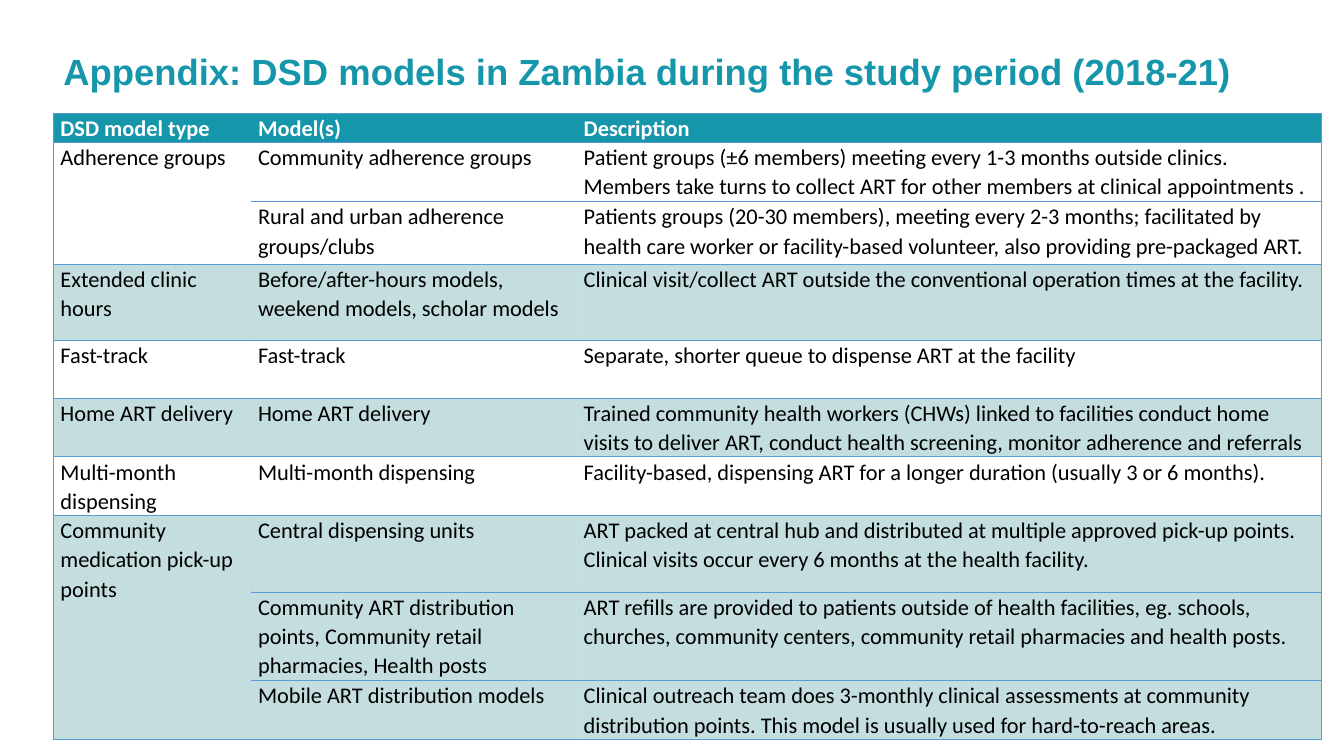
from lxml.etree import SubElement
from pptx import Presentation
from pptx.dml.color import RGBColor
from pptx.enum.text import MSO_ANCHOR
from pptx.oxml import parse_xml
from pptx.oxml.ns import nsdecls, qn
from pptx.util import Inches, Pt

TEAL = RGBColor(0x16, 0x96, 0xAB)
PALE_TEAL = RGBColor(0x8A, 0xBC, 0xBF)
RULE_BLUE = RGBColor(0x5B, 0x9B, 0xD5)
WHITE = RGBColor(0xFF, 0xFF, 0xFF)
BLACK = RGBColor(0, 0, 0)

TITLE = "Appendix: DSD models in Zambia during the study period (2018-21)"
HEADER = ("DSD model type", "Model(s)", "Description")
# Each model type with its (row height, models, description) entries
MODEL_TYPES = [
    ("Adherence groups", [
        (0.59, "Community adherence groups",
         "Patient groups (±6 members) meeting every 1-3 months outside clinics. "
         "Members take turns to collect ART for other members at clinical appointments ."),
        (0.62, "Rural and urban adherence groups/clubs",
         "Patients groups (20-30 members), meeting every 2-3 months; facilitated by "
         "health care worker or facility-based volunteer, also providing pre-packaged ART."),
    ]),
    ("Extended clinic hours", [
        (0.76, "Before/after-hours models,\nweekend models, scholar models",
         "Clinical visit/collect ART outside the conventional operation times at the facility."),
    ]),
    ("Fast-track", [
        (0.57, "Fast-track", "Separate, shorter queue to dispense ART at the facility"),
    ]),
    ("Home ART delivery", [
        (0.57, "Home ART delivery",
         "Trained community health workers (CHWs) linked to facilities conduct home "
         "visits to deliver ART, conduct health screening, monitor adherence and referrals"),
    ]),
    ("Multi-month dispensing", [
        (0.43, "Multi-month dispensing",
         "Facility-based, dispensing ART for a longer duration (usually 3 or 6 months)."),
    ]),
    ("Community medication pick-up points", [
        (0.76, "Central dispensing units",
         "ART packed at central hub and distributed at multiple approved pick-up points. "
         "Clinical visits occur every 6 months at the health facility."),
        (0.88, "Community ART distribution points, Community retail pharmacies, Health posts",
         "ART refills are provided to patients outside of health facilities, eg. schools, "
         "churches, community centers, community retail pharmacies and health posts."),
        (0.57, "Mobile ART distribution models",
         "Clinical outreach team does 3-monthly clinical assessments at community "
         "distribution points. This model is usually used for hard-to-reach areas."),
    ]),
]
HEADER_HEIGHT = 0.29
COLUMN_WIDTHS = (1.96, 3.23, 7.39)
CELL_FORMAT = {
    "margin_left": Inches(0.07), "margin_right": Inches(0.07),
    "margin_top": 0, "margin_bottom": 0, "vertical_anchor": MSO_ANCHOR.TOP,
}


def format_text(frame, text, line_spacing, color, **font_format):
    frame.text = text
    for paragraph in frame.paragraphs:
        paragraph.line_spacing = line_spacing
        paragraph.font.color.rgb = color
        for run in paragraph.runs:
            run.font.color.rgb = color
            for name, value in font_format.items():
                setattr(run.font, name, value)


def add_title(slide):
    title = slide.shapes.add_textbox(Inches(0.53), Inches(0.21), Inches(12.49), Inches(1.05))
    frame = title.text_frame
    frame.word_wrap = True
    frame.vertical_anchor = MSO_ANCHOR.MIDDLE
    format_text(frame, TITLE, 0.9, TEAL, name="Arial", size=Pt(26), bold=True)


def fill_cell(cell, color, opacity=100):
    cell.fill.solid()
    cell.fill.fore_color.rgb = color
    if opacity < 100:
        swatch = cell.fill._xPr.find(".//" + qn("a:srgbClr"))
        SubElement(swatch, qn("a:alpha"), val=str(opacity * 1000))


def set_borders(cell, ruled_sides):
    """Rule the given sides (letters of LRTB) and clear the others."""
    properties = cell._tc.get_or_add_tcPr()
    for position, side in enumerate("LRTB"):
        paint = (f'<a:solidFill><a:srgbClr val="{RULE_BLUE}"/></a:solidFill>'
                 if side in ruled_sides else "<a:noFill/>")
        border = parse_xml(f'<a:ln{side} {nsdecls("a")} w="{Pt(0.5)}">{paint}</a:ln{side}>')
        properties.insert(position, border)


def write_cell(cell, text, color=BLACK, bold=False):
    for name, value in CELL_FORMAT.items():
        setattr(cell, name, value)
    format_text(cell.text_frame, text, 1.07, color, name="Calibri", size=Pt(16), bold=bold)


def add_models_table(slide):
    heights = [HEADER_HEIGHT] + [entry[0] for _, entries in MODEL_TYPES for entry in entries]
    table = slide.shapes.add_table(
        len(heights), len(HEADER), Inches(0.53), Inches(1.12),
        Inches(sum(COLUMN_WIDTHS)), Inches(sum(heights))).table
    table.horz_banding = False
    for column, width in zip(table.columns, COLUMN_WIDTHS):
        column.width = Inches(width)
    for row, height in zip(table.rows, heights):
        row.height = Inches(height)

    outer_sides = ("LTB", "TB", "TBR")
    for column, heading in enumerate(HEADER):
        cell = table.cell(0, column)
        write_cell(cell, heading, WHITE, True)
        fill_cell(cell, TEAL)
        set_borders(cell, outer_sides[column])

    row = 1
    for group, (model_type, entries) in enumerate(MODEL_TYPES):
        last_row = row + len(entries) - 1
        if last_row > row:
            table.cell(row, 0).merge(table.cell(last_row, 0))
        for offset, (_, models, description) in enumerate(entries):
            texts = ("" if offset else model_type, models, description)
            for column, text in enumerate(texts):
                cell = table.cell(row + offset, column)
                write_cell(cell, text)
                if group % 2:
                    fill_cell(cell, PALE_TEAL, 50)
                else:
                    cell.fill.background()
                sides = outer_sides[column]
                if cell.is_spanned:
                    sides = "LB" if row + offset == last_row else "L"
                set_borders(cell, sides)
        row = last_row + 1


def main():
    presentation = Presentation()
    presentation.slide_width = Inches(13.33)
    presentation.slide_height = Inches(7.5)
    slide = presentation.slides.add_slide(presentation.slide_layouts[6])
    add_models_table(slide)
    add_title(slide)
    presentation.save("out.pptx")


if __name__ == "__main__":
    main()
